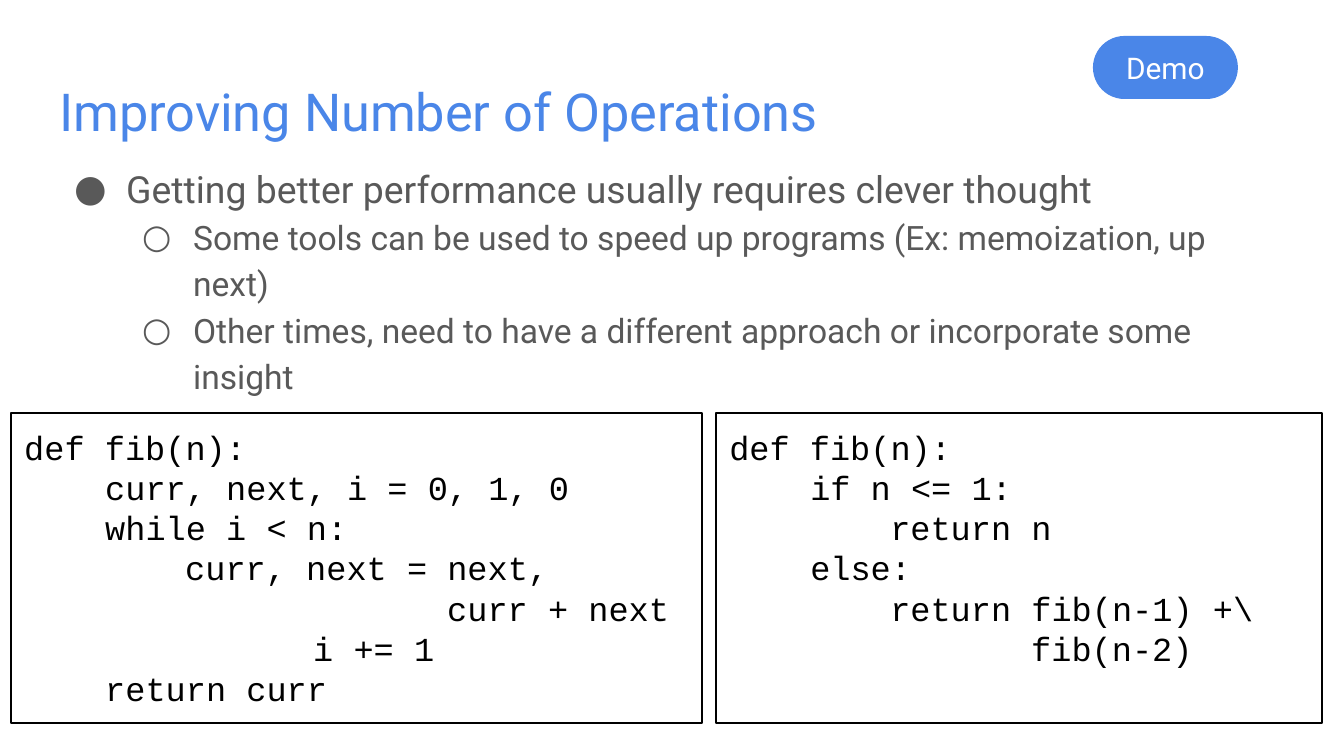
import pptx
import pptx.util
import pptx.dml.color
import pptx.enum.shapes
import pptx.enum.text
import pptx.oxml
import pptx.oxml.ns

SCALE = 914400 * 10 / 1344  # EMU per px
SHAPE = pptx.enum.shapes.MSO_SHAPE
ANCHOR = pptx.enum.text.MSO_ANCHOR
ALIGN = pptx.enum.text.PP_ALIGN


class Theme:
    blue, gray, black, white = "4A86E8", "595959", "000000", "FFFFFF"
    sans, mono = "Roboto", "Courier New"
    title, point, sub, code, badge = 28, 20, 18, 18, 16
    line = 0.75


# Text with its left indent in px
POINTS = [
    (0, "Getting better performance usually requires clever thought"),
    (1, "Some tools can be used to speed up programs (Ex: memoization, up next)"),
    (1, "Other times, need to have a different approach or incorporate some insight"),
]
LOOP = [
    (0, "def fib(n):"),
    (81, "curr, next, i = 0, 1, 0"),
    (81, "while i < n:"),
    (161, "curr, next = next,"),
    (423, "curr + next"),
    (289, "i += 1"),
    (81, "return curr"),
]
RECUR = [
    (0, "def fib(n):"),
    (81, "if n <= 1:"),
    (161, "return n"),
    (81, "else:"),
    (161, "return fib(n-1) +\\"),
    (302, "fib(n-2)"),
]


def px(num):
    return pptx.util.Emu(round(num * SCALE))


def color(hue):
    return pptx.dml.color.RGBColor.from_string(hue)


def apply(item, **look):
    for name, val in look.items():
        setattr(item, name, val)


def frame(shape, anchor=ANCHOR.TOP):
    """Set the wrap, anchor and even insets of a shape's text."""
    text = shape.text_frame
    sides = ("left", "top", "right", "bottom")
    apply(text, word_wrap=True, vertical_anchor=anchor,
          **{f"margin_{side}": pptx.util.Inches(0.1) for side in sides})
    return text


def write(text, words, font, size, hue, first=True, align=ALIGN.LEFT):
    """Write one paragraph, reusing the first one of the frame."""
    para = text.paragraphs[0] if first else text.add_paragraph()
    para.alignment = align
    run = para.add_run()
    run.text = words
    apply(run.font, name=font, size=pptx.util.Pt(size))
    run.font.color.rgb = color(hue)
    return para


def indent(para, left, hang=0):
    props = para._p.get_or_add_pPr()
    props.set("marL", str(px(left)))
    props.set("indent", str(-px(hang)))
    return props


def bullet(para, level):
    """Hang the paragraph on a gray bullet for its level."""
    para.level = level
    para.line_spacing = 1.15
    props = indent(para, (67, 134)[level], (52, 51)[level])
    space = pptx.oxml.ns.nsdecls("a")
    for xml in (
        f'<a:buClr {space}><a:srgbClr val="{Theme.gray}"/></a:buClr>',
        f'<a:buFont {space} typeface="{Theme.sans}"/>',
        f'<a:buChar {space} char="{"●○"[level]}"/>',
    ):
        props.append(pptx.oxml.parse_xml(xml))


def label(slide, box):
    return frame(slide.shapes.add_textbox(*map(px, box)))


def panel(slide, kind, box):
    shape = slide.shapes.add_shape(kind, *map(px, box))
    shape.shadow.inherit = False
    return shape


def listing(slide, box, rows):
    """Draw an outlined box with lines of code."""
    shape = panel(slide, SHAPE.RECTANGLE, box)
    shape.fill.background()
    shape.line.color.rgb = color(Theme.black)
    shape.line.width = pptx.util.Pt(Theme.line)
    text = frame(shape)
    for num, (left, words) in enumerate(rows):
        para = write(text, words, Theme.mono, Theme.code, Theme.black, num == 0)
        indent(para, left)


def badge(slide, box, words):
    shape = panel(slide, SHAPE.ROUNDED_RECTANGLE, box)
    shape.adjustments[0] = 0.5
    shape.fill.solid()
    shape.fill.fore_color.rgb = color(Theme.blue)
    shape.line.fill.background()
    write(frame(shape, ANCHOR.MIDDLE), words, Theme.sans, Theme.badge,
          Theme.white, align=ALIGN.CENTER)


def main():
    deck = pptx.Presentation()
    apply(deck, slide_width=px(1344), slide_height=px(756))
    slide = deck.slides.add_slide(deck.slide_layouts[6])

    # Title
    write(label(slide, (46, 66, 1253, 85)), "Improving Number of Operations",
          Theme.sans, Theme.title, Theme.blue)

    # Bullet points
    body = label(slide, (46, 146, 1253, 503))
    for num, (level, words) in enumerate(POINTS):
        size = (Theme.point, Theme.sub)[level]
        para = write(body, words, Theme.sans, size, Theme.gray, num == 0)
        bullet(para, level)

    # Demo badge
    badge(slide, (1093, 36, 145, 63), "Demo")

    # Code side by side
    for left, width, rows in ((11, 691, LOOP), (716, 606, RECUR)):
        listing(slide, (left, 413, width, 310), rows)

    deck.save("out.pptx")


if __name__ == "__main__":
    main()
